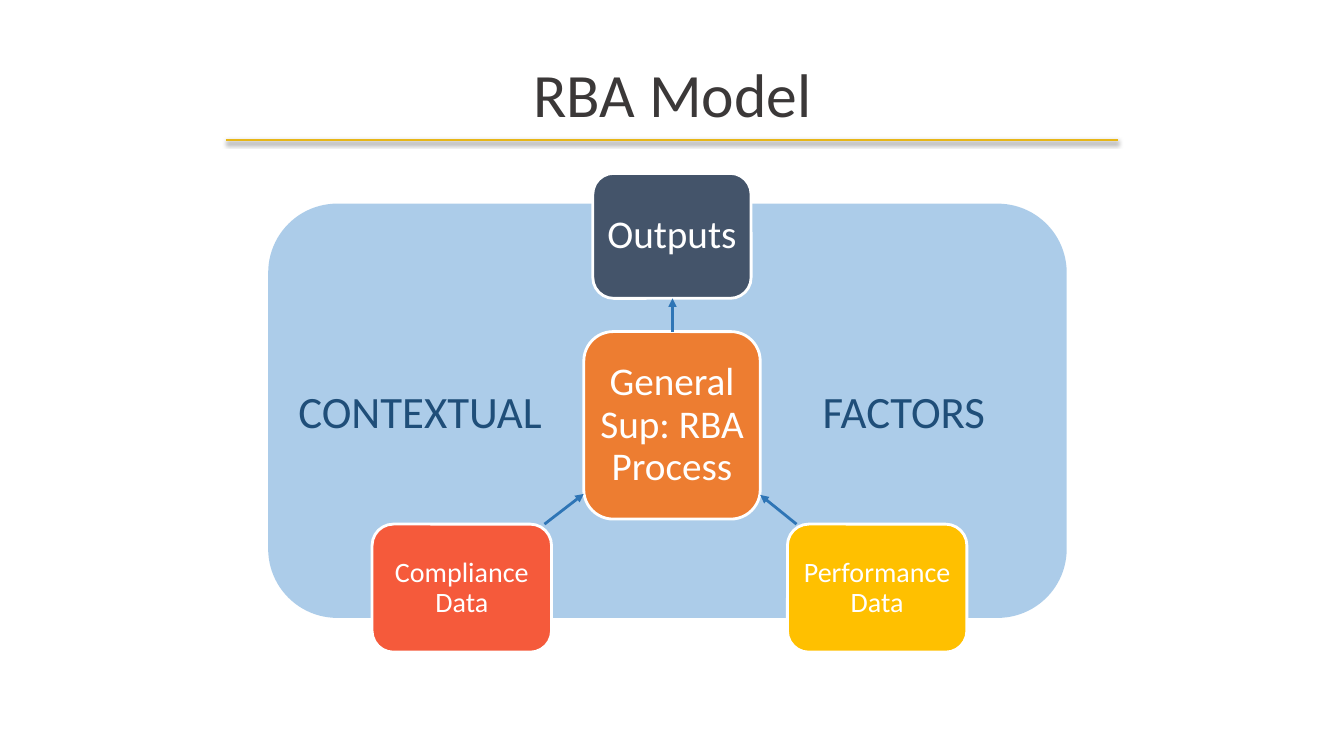
from pptx import Presentation
from pptx.dml.color import RGBColor
from pptx.enum.shapes import MSO_CONNECTOR as Connector, MSO_SHAPE as Preset
from pptx.enum.text import MSO_ANCHOR as Anchor, PP_ALIGN as Align
from pptx.oxml import parse_xml
from pptx.oxml.ns import nsdecls, qn
from pptx.oxml.xmlchemy import OxmlElement
from pptx.util import Inches, Pt

WHITE = RGBColor(0xFF, 0xFF, 0xFF)
CHARCOAL = RGBColor(0x3B, 0x38, 0x38)
GOLD = RGBColor(0xE7, 0xB6, 0x17)
SKY = RGBColor(0x5B, 0x9B, 0xD5)
NAVY = RGBColor(0x1F, 0x4E, 0x79)
BLUE = RGBColor(0x2E, 0x75, 0xB6)
ORANGE = RGBColor(0xED, 0x7D, 0x31)
SLATE = RGBColor(0x44, 0x54, 0x6A)
AMBER = RGBColor(0xFF, 0xC0, 0x00)
CORAL = RGBColor(0xF5, 0x5A, 0x3B)

NODES = [
    ("General Sup: RBA Process", 3.13, 1.27, 1.75, 1.86, ORANGE, 28),
    ("Outputs", 3.22, -0.3, 1.57, 1.24, SLATE, 28),
    ("Performance Data", 5.15, 3.18, 1.78, 1.27, AMBER, 20),
    ("Compliance Data", 1.03, 3.18, 1.78, 1.27, CORAL, 20),
]
ARROWS = [
    ((4.01, 1.27), (4.01, 0.94)),
    ((5.24, 3.18), (4.88, 2.89)),
    ((2.74, 3.18), (3.13, 2.88)),
]


def apply_format(target, values):
    for name, value in values.items():
        setattr(target, name, value)


def write_text(shape, text, size, color, align, frame_format):
    frame = shape.text_frame
    apply_format(frame, {"word_wrap": True, "vertical_anchor": Anchor.MIDDLE, **frame_format})
    para = frame.paragraphs[0]
    para.alignment = align
    span = para.add_run()
    span.text = text
    apply_format(span.font, {"name": "Calibri", "size": Pt(size)})
    span.font.color.rgb = color
    return para


def add_line(page, start, end, color):
    line = page.shapes.add_connector(
        Connector.STRAIGHT, *(Inches(value) for value in (*start, *end)))
    line.line.color.rgb = color
    line.line.width = Pt(2)
    effects = OxmlElement("a:effectLst")
    line._element.spPr.append(effects)
    return line, effects


def add_rounded(page, box, color):
    shape = page.shapes.add_shape(
        Preset.ROUNDED_RECTANGLE, *(Inches(value) for value in box))
    shape.shadow.inherit = False
    shape.fill.solid()
    shape.fill.fore_color.rgb = color
    return shape


def add_heading(page, box):
    left, top, width, height = box
    title = page.shapes.title
    apply_format(title, {"left": Inches(left), "top": Inches(top),
                         "width": Inches(width), "height": Inches(height)})
    write_text(title, "RBA Model", 44, CHARCOAL, Align.CENTER, {})
    rule_top = top + 1.09
    rule, effects = add_line(
        page, (left + 1.57, rule_top), (left + 10.42, rule_top), GOLD)
    effects.append(parse_xml(
        f'<a:outerShdw {nsdecls("a")} blurRad="{Pt(3.1)}" dist="{Pt(1.6)}" '
        'dir="5400000" rotWithShape="0"><a:srgbClr val="000000">'
        '<a:alpha val="38000"/></a:srgbClr></a:outerShdw>'))


def add_context(page, box):
    panel = add_rounded(page, box, SKY)
    panel.line.fill.background()
    alpha = OxmlElement("a:alpha")
    alpha.set("val", "50000")
    panel._element.spPr.find(qn("a:solidFill"))[0].append(alpha)
    para = write_text(panel, "CONTEXTUAL\tFACTORS", 32, NAVY, Align.LEFT, {})
    stops = OxmlElement("a:tabLst")
    stop = OxmlElement("a:tab")
    stop.set("pos", str(Inches(5.2)))
    stop.set("algn", "l")
    stops.append(stop)
    para._p.get_or_add_pPr().append(stops)


def add_node(page, box, text, color, size):
    node = add_rounded(page, box, color)
    node.line.color.rgb = WHITE
    node.line.width = Pt(2)
    margins = {f"margin_{side}": Inches(0.06)
               for side in ("left", "right", "top", "bottom")}
    para = write_text(node, text, size, WHITE, Align.CENTER, margins)
    para.line_spacing = 0.9


def add_arrow(page, start, end):
    arrow, effects = add_line(page, start, end, BLUE)
    head = OxmlElement("a:tailEnd")
    head.set("type", "triangle")
    arrow.line._get_or_add_ln().append(head)


def add_model(page, box):
    left, top, width, height = box
    add_context(page, box)
    for text, across, down, node_width, node_height, color, size in NODES:
        add_node(page, (left + across, top + down, node_width, node_height),
                 text, color, size)
    for ends in ARROWS:
        add_arrow(page, *((left + across, top + down) for across, down in ends))


def main():
    deck = Presentation()
    apply_format(deck, {"slide_width": Inches(13.33), "slide_height": Inches(7.5)})
    page = deck.slides.add_slide(deck.slide_layouts[5])
    add_heading(page, (0.67, 0.3, 12, 1.25))
    add_model(page, (2.66, 2.02, 7.92, 4.11))
    deck.save("out.pptx")


if __name__ == "__main__":
    main()
